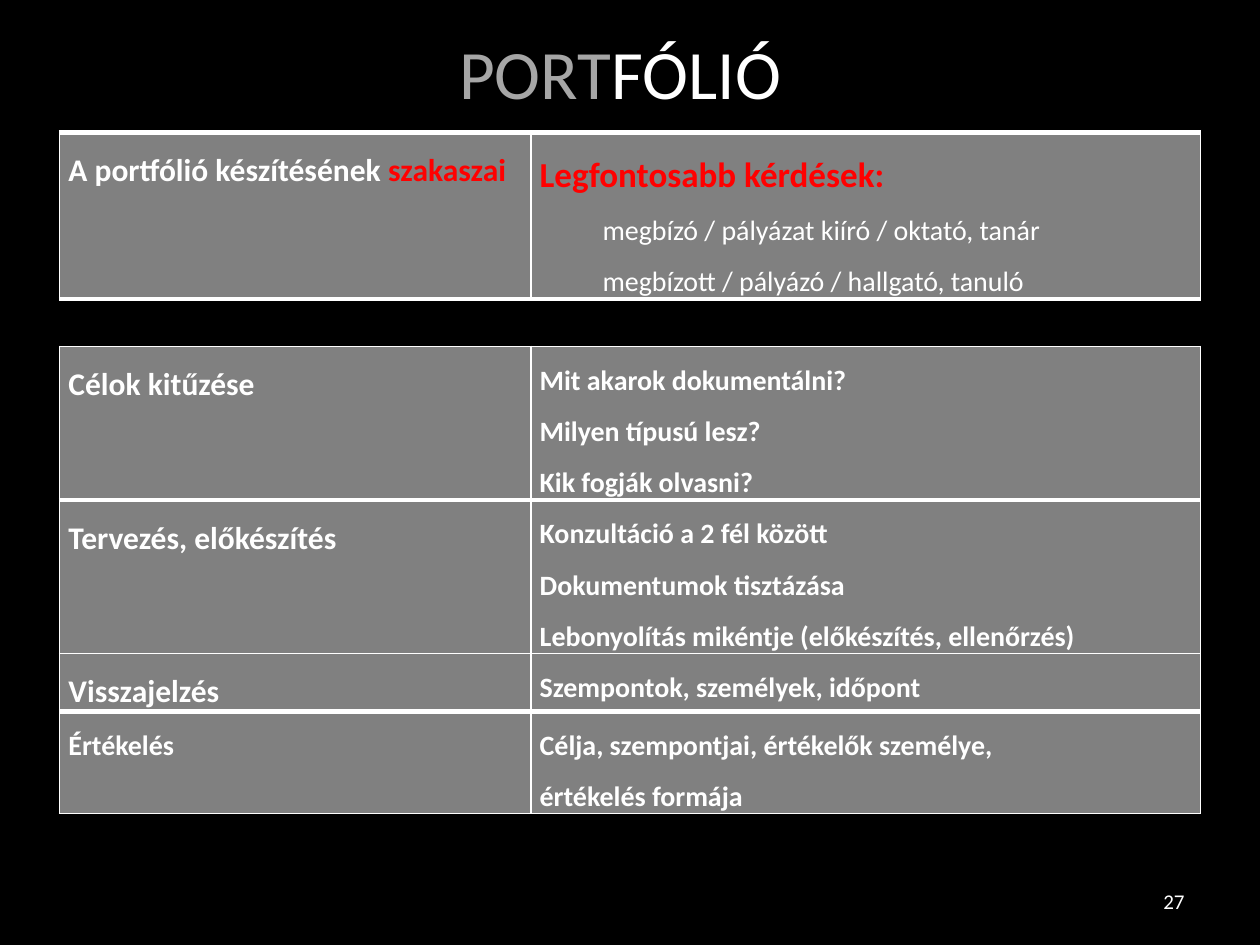
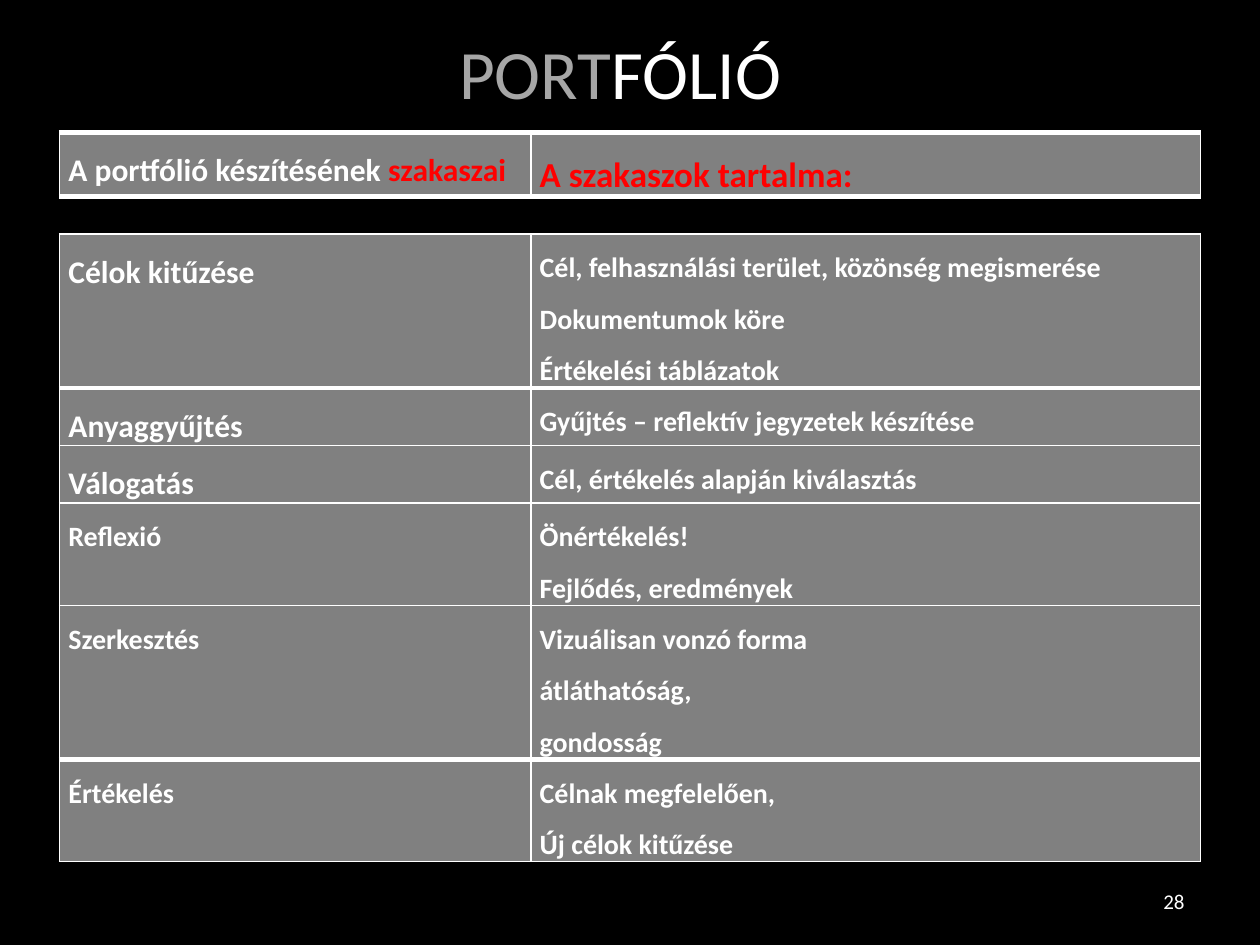
from lxml.etree import SubElement
from pptx import Presentation
from pptx.dml.color import RGBColor
from pptx.enum.text import MSO_ANCHOR, PP_ALIGN
from pptx.oxml.ns import qn
from pptx.util import Cm, Pt

BLACK = RGBColor(0x00, 0x00, 0x00)
WHITE = RGBColor(0xFF, 0xFF, 0xFF)
RED = RGBColor(0xFF, 0x00, 0x00)
PALE_GREY = RGBColor(0xA6, 0xA6, 0xA6)
CELL_GREY = RGBColor(0x80, 0x80, 0x80)
FONT = "Calibri"

FIRST_NUMBER = 27
TABLE_LEFT, HEADING_TOP = 1.2, 2.67
COLUMN_WIDTHS = (9.5, 13.5)
LINE_SPACING = 1.5
FONT_LINE = 1.22  # natural line height of the font, in ems
THIN, THICK = 1, 3

# Each stage: name, size of the name, lines of the right-hand cell
SLIDES = [
    {
        "heading": "Legfontosabb kérdések:",
        "roles": ["megbízó / pályázat kiíró / oktató, tanár",
                  "megbízott / pályázó / hallgató, tanuló"],
        "stages_top": 6.98,
        "stages": [
            ("Célok kitűzése", 18, ["Mit akarok dokumentálni?",
                                    "Milyen típusú lesz?",
                                    "Kik fogják olvasni?"]),
            ("Tervezés, előkészítés", 18, ["Konzultáció a 2 fél között",
                                           "Dokumentumok tisztázása",
                                           "Lebonyolítás mikéntje (előkészítés, ellenőrzés)"]),
            ("Visszajelzés", 18, ["Szempontok, személyek, időpont"]),
            ("Értékelés", 16, ["Célja, szempontjai, értékelők személye,",
                               "értékelés formája"]),
        ],
    },
    {
        "heading": "A szakaszok tartalma:",
        "roles": [],
        "stages_top": 4.72,
        "stages": [
            ("Célok kitűzése", 18, ["Cél, felhasználási terület, közönség megismerése",
                                    "Dokumentumok köre",
                                    "Értékelési táblázatok"]),
            ("Anyaggyűjtés", 18, ["Gyűjtés – reflektív jegyzetek készítése"]),
            ("Válogatás", 18, ["Cél, értékelés alapján kiválasztás"]),
            ("Reflexió", 16, ["Önértékelés!", "Fejlődés, eredmények"]),
            ("Szerkesztés", 16, ["Vizuálisan vonzó forma", "átláthatóság,", "gondosság"]),
            ("Értékelés", 16, ["Célnak megfelelően,", "Új célok kitűzése"]),
        ],
    },
]


def line(*spans, size=16, bold=True, indent=0):
    """Describe one paragraph; each span is a (text, colour) pair."""
    return {"spans": spans, "size": size, "bold": bold, "indent": indent}


def write(frame, lines, align=PP_ALIGN.LEFT, spacing=1.0):
    for index, item in enumerate(lines):
        para = frame.paragraphs[0] if index == 0 else frame.add_paragraph()
        para.alignment = align
        para.line_spacing = spacing
        if item["indent"]:
            para.level = 1
            properties = para._p.get_or_add_pPr()
            properties.set("marL", str(Cm(item["indent"])))
            properties.set("indent", "0")
        for text, colour in item["spans"]:
            span = para.add_run()
            span.text = text
            span.font.name = FONT
            span.font.size = Pt(item["size"])
            span.font.bold = item["bold"]
            span.font.color.rgb = colour


def set_borders(cell, top, bottom):
    properties = cell._tc.get_or_add_tcPr()
    for side, width in (("L", THIN), ("R", THIN), ("T", top), ("B", bottom)):
        border = SubElement(properties, qn(f"a:ln{side}"), w=str(Pt(width)))
        fill = SubElement(border, qn("a:solidFill"))
        SubElement(fill, qn("a:srgbClr"), val=str(WHITE))


def row_height(cells):
    """Height of the tallest cell, from its font sizes."""
    return Pt(max(sum(item["size"] for item in lines) for lines in cells)
              * FONT_LINE * LINE_SPACING)


def add_grid(page, top, rows, rules):
    """Add a table; rules holds the widths of its horizontal lines."""
    heights = [row_height(cells) for cells in rows]
    table = page.shapes.add_table(
        len(rows), len(COLUMN_WIDTHS), Cm(TABLE_LEFT), Cm(top),
        Cm(sum(COLUMN_WIDTHS)), sum(heights)).table
    table.first_row = table.horz_banding = False
    for column, width in zip(table.columns, COLUMN_WIDTHS):
        column.width = Cm(width)
    for r, cells in enumerate(rows):
        table.rows[r].height = heights[r]
        for c, lines in enumerate(cells):
            cell = table.cell(r, c)
            cell.margin_left = cell.margin_right = Cm(0.18)
            cell.margin_top = cell.margin_bottom = 0
            set_borders(cell, rules[r], rules[r + 1])
            cell.fill.solid()
            cell.fill.fore_color.rgb = CELL_GREY
            write(cell.text_frame, lines, spacing=LINE_SPACING)


def add_title(page):
    title, subtitle = page.placeholders
    subtitle.element.getparent().remove(subtitle.element)
    title.left, title.top, title.width, title.height = Cm(1.7), Cm(0.74), Cm(21.6), Cm(1.4)
    title.text_frame.vertical_anchor = MSO_ANCHOR.MIDDLE
    write(title.text_frame,
          [line(("PORT", PALE_GREY), ("FÓLIÓ", WHITE), size=39.6, bold=False)],
          align=PP_ALIGN.CENTER)


def add_number(page, number):
    box = page.shapes.add_textbox(Cm(18.2), Cm(17.65), Cm(5.93), Cm(1.02))
    box.text_frame.word_wrap = True
    box.text_frame.vertical_anchor = MSO_ANCHOR.MIDDLE
    write(box.text_frame, [line((str(number), WHITE), size=12, bold=False)],
          align=PP_ALIGN.RIGHT)


def add_page(deck, number, content):
    page = deck.slides.add_slide(deck.slide_layouts[0])
    add_title(page)
    add_number(page, number)

    stage_heading = [line(("A portfólió készítésének ", WHITE), ("szakaszai", RED), size=18)]
    content_heading = [line((content["heading"], RED), size=20)]
    content_heading += [line((role, WHITE), bold=False, indent=1.27)
                        for role in content["roles"]]
    add_grid(page, HEADING_TOP, [(stage_heading, content_heading)], [THICK, THICK])

    rows = [([line((name, WHITE), size=size)], [line((text, WHITE)) for text in texts])
            for name, size, texts in content["stages"]]
    rules = [THIN, THICK] + [THIN] * (len(rows) - 3) + [THICK, THIN]
    add_grid(page, content["stages_top"], rows, rules)


def main():
    deck = Presentation()
    deck.slide_width, deck.slide_height = Cm(25.4), Cm(19.05)
    background = deck.slide_master.background.fill
    background.solid()
    background.fore_color.rgb = BLACK
    for number, content in enumerate(SLIDES, start=FIRST_NUMBER):
        add_page(deck, number, content)
    deck.save("out.pptx")


if __name__ == "__main__":
    main()
